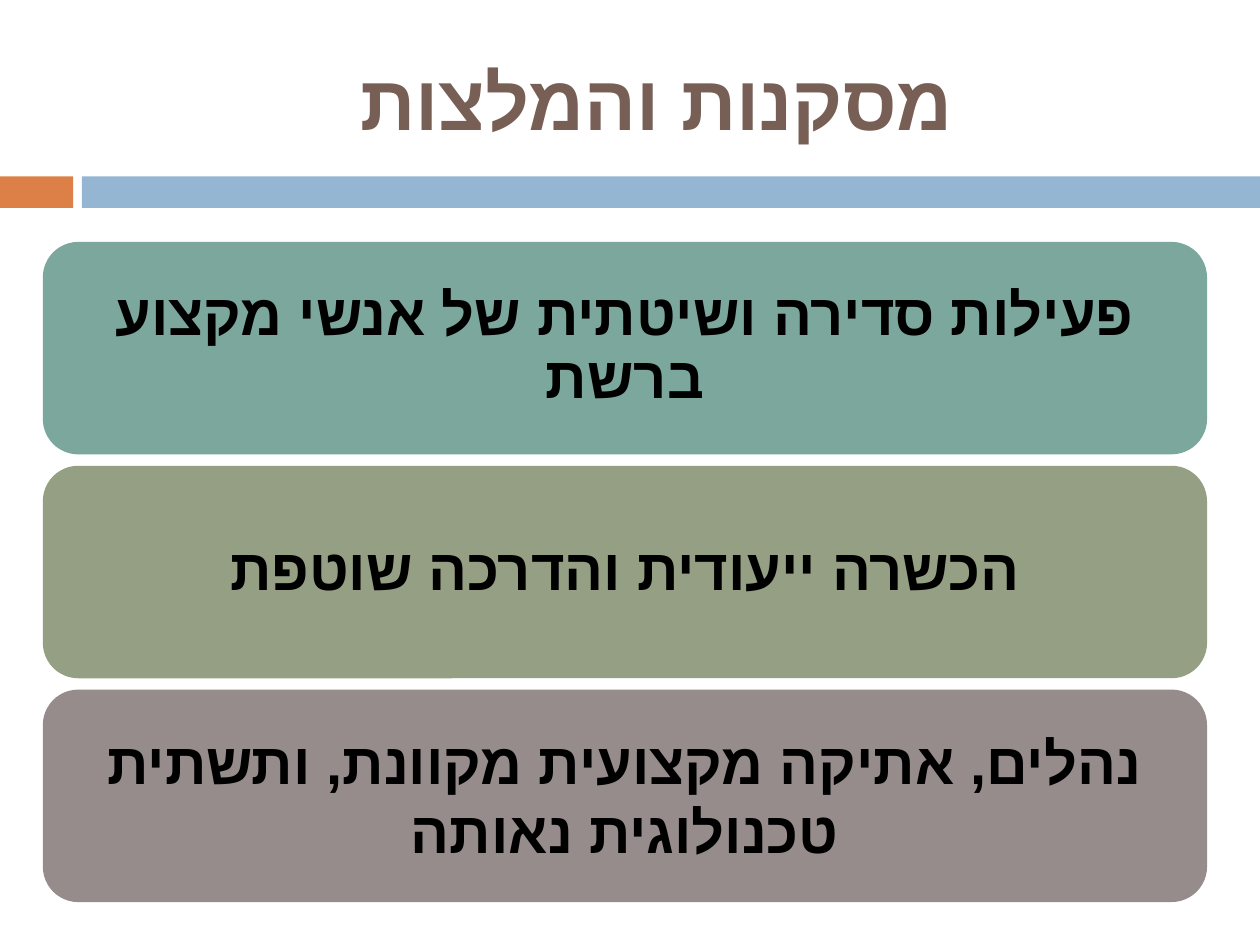
from lxml import etree
from pptx import Presentation
from pptx import util as u
from pptx.dml.color import RGBColor
from pptx.enum import shapes, text
from pptx.oxml.ns import qn

FONT = "Arial"
COLORS = {
    "title": "775F55",
    "accent": "DD8047",
    "band": "94B6D2",
    "teal": "7BA79D",
    "olive": "949F83",
    "mauve": "968C8C",
    "body": "000000",
}
# Text, fill and line spacing of each card
CONCLUSIONS = [
    ("פעילות סדירה ושיטתית של אנשי מקצוע ברשת", "teal", 0.9),
    ("הכשרה ייעודית והדרכה שוטפת", "olive", 0.9),
    ("נהלים, אתיקה מקצועית מקוונת, ותשתית טכנולוגית נאותה", "mauve", 1.0),
]


def add_block(slide, kind, box, color):
    shape = slide.shapes.add_shape(kind, *(u.Inches(length) for length in box))
    shape.shadow.inherit = False
    shape.fill.solid()
    shape.fill.fore_color.rgb = RGBColor.from_string(COLORS[color])
    shape.line.fill.background()
    return shape


def write_hebrew(text_frame, wording, size, color):
    """Set one bold, centred right-to-left paragraph and return it."""
    text_frame.text = wording
    text_frame.word_wrap = True
    text_frame.vertical_anchor = text.MSO_ANCHOR.MIDDLE
    paragraph = text_frame.paragraphs[0]
    paragraph.alignment = text.PP_ALIGN.CENTER
    paragraph._p.get_or_add_pPr().set("rtl", "1")
    for run in paragraph.runs:
        run.font.name = FONT
        run.font.size = u.Pt(size)
        run.font.bold = True
        run.font.color.rgb = RGBColor.from_string(COLORS[color])
        properties = run._r.get_or_add_rPr()
        properties.set("lang", "he-IL")
        etree.SubElement(properties, qn("a:cs"), typeface=FONT)
    return paragraph


def add_title(slide, box):
    title = slide.shapes.add_textbox(*(u.Inches(length) for length in box))
    write_hebrew(title.text_frame, "מסקנות והמלצות ", 44, "title")


def add_divider(slide, box, accent_width=0.58, gap=0.07):
    left, top, width, height = box
    start = accent_width + gap
    rectangle = shapes.MSO_SHAPE.RECTANGLE
    add_block(slide, rectangle, (left, top, accent_width, height), "accent")
    add_block(slide, rectangle, (left + start, top, width - start, height), "band")


def add_conclusions(slide, box, gap=0.09, inset=0.08):
    """Stack equal cards down the box."""
    left, top, width, height = box
    card_height = (height - gap * (len(CONCLUSIONS) - 1)) / len(CONCLUSIONS)
    for row, (wording, color, spacing) in enumerate(CONCLUSIONS):
        card_top = top + row * (card_height + gap)
        card = add_block(slide, shapes.MSO_SHAPE.ROUNDED_RECTANGLE,
                         (left, card_top, width, card_height), color)
        label = slide.shapes.add_textbox(*(u.Inches(length) for length in (
            left + inset, card_top + inset,
            width - 2 * inset, card_height - 2 * inset)))
        frame = label.text_frame
        frame.margin_left = frame.margin_right = u.Inches(0.14)
        frame.margin_top = frame.margin_bottom = u.Inches(0.07)
        paragraph = write_hebrew(frame, wording, 33, "body")
        paragraph.line_spacing = spacing
        paragraph.space_after = u.Pt(11.5)
        card.name = f"Conclusion {row + 1}"


def main():
    presentation = Presentation()
    presentation.slide_width = u.Inches(10)
    presentation.slide_height = u.Inches(7.5)
    slide = presentation.slides.add_slide(presentation.slide_layouts[6])
    add_divider(slide, (0, 1.4, 10, 0.25))
    add_title(slide, (0.67, 0.25, 8.92, 1.08))
    add_conclusions(slide, (0.34, 1.92, 9.24, 5.24))
    presentation.save("out.pptx")


if __name__ == "__main__":
    main()
